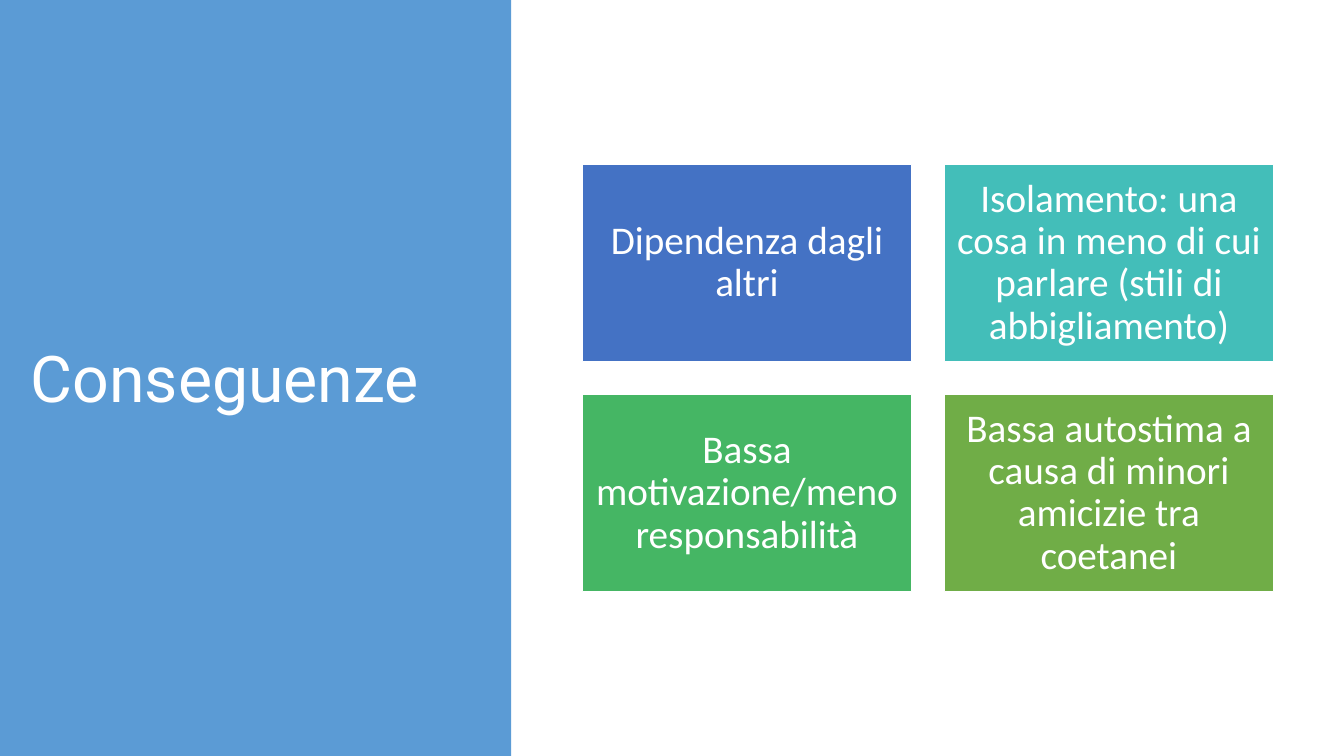
from pptx import Presentation
from pptx.dml.color import RGBColor
from pptx.enum.shapes import MSO_SHAPE
from pptx.enum.text import MSO_ANCHOR, PP_ALIGN
from pptx.util import Cm, Pt

RECTANGLE = MSO_SHAPE.RECTANGLE
MIDDLE = MSO_ANCHOR.MIDDLE
LEFT, CENTER = PP_ALIGN.LEFT, PP_ALIGN.CENTER

WHITE = RGBColor(0xFF, 0xFF, 0xFF)
PANEL_BLUE = RGBColor(0x5B, 0x9B, 0xD5)
BLUE = RGBColor(0x44, 0x72, 0xC4)
TEAL = RGBColor(0x43, 0xBE, 0xB9)
GREEN = RGBColor(0x45, 0xB6, 0x64)
OLIVE = RGBColor(0x70, 0xAD, 0x47)

SLIDE_WIDTH, SLIDE_HEIGHT = 33.87, 19.05
CARD_LEFT, CARD_TOP = 14.68, 4.14
CARD_WIDTH, CARD_HEIGHT = 8.29, 4.97
CARD_GAP = 0.83
CARD_INSET = 0.29
COLUMNS = 2

CONSEQUENCES = [
    ("Dipendenza dagli altri", BLUE),
    ("Isolamento: una cosa in meno di cui parlare (stili di abbigliamento)", TEAL),
    ("Bassa motivazione/meno responsabilità", GREEN),
    ("Bassa autostima a causa di minori amicizie tra coetanei", OLIVE),
]


class SlideBuilder:
    title_font = "Roboto"
    title_size = Pt(46)
    card_font = "Calibri"
    card_size = Pt(28)
    text_color = WHITE

    def __init__(self, slide):
        self.slide = slide

    def set_text(self, shape, text, font_name, size, alignment):
        frame = shape.text_frame
        frame.word_wrap = True
        frame.vertical_anchor = MIDDLE
        paragraph = frame.paragraphs[0]
        paragraph.text = text
        paragraph.alignment = alignment
        paragraph.line_spacing = 0.9
        paragraph.font.name = font_name
        paragraph.font.size = size
        paragraph.font.color.rgb = self.text_color

    def rectangle(self, left, top, width, height, color):
        shape = self.slide.shapes.add_shape(
            RECTANGLE, Cm(left), Cm(top), Cm(width), Cm(height)
        )
        shape.shadow.inherit = False
        shape.fill.solid()
        shape.fill.fore_color.rgb = color
        shape.line.fill.background()
        return shape

    def title(self, left, top, width, height, text):
        box = self.slide.shapes.add_textbox(Cm(left), Cm(top), Cm(width), Cm(height))
        self.set_text(box, text, self.title_font, self.title_size, LEFT)

    def card(self, left, top, text, color):
        shape = self.rectangle(left, top, CARD_WIDTH, CARD_HEIGHT, color)
        shape.line.color.rgb = WHITE
        shape.line.width = Pt(1)
        frame = shape.text_frame
        frame.margin_left = frame.margin_right = Cm(CARD_INSET)
        frame.margin_top = frame.margin_bottom = Cm(CARD_INSET)
        self.set_text(shape, text, self.card_font, self.card_size, CENTER)


def main():
    presentation = Presentation()
    presentation.slide_width = Cm(SLIDE_WIDTH)
    presentation.slide_height = Cm(SLIDE_HEIGHT)
    slide = presentation.slides.add_slide(presentation.slide_layouts[6])
    builder = SlideBuilder(slide)

    builder.rectangle(0, 0, 12.88, SLIDE_HEIGHT, PANEL_BLUE)
    builder.title(0.53, 1.98, 11.63, 15.29, "Conseguenze")
    for index, (text, color) in enumerate(CONSEQUENCES):
        row, column = divmod(index, COLUMNS)
        left = CARD_LEFT + column * (CARD_WIDTH + CARD_GAP)
        top = CARD_TOP + row * (CARD_HEIGHT + CARD_GAP)
        builder.card(left, top, text, color)

    presentation.save("out.pptx")


if __name__ == "__main__":
    main()
